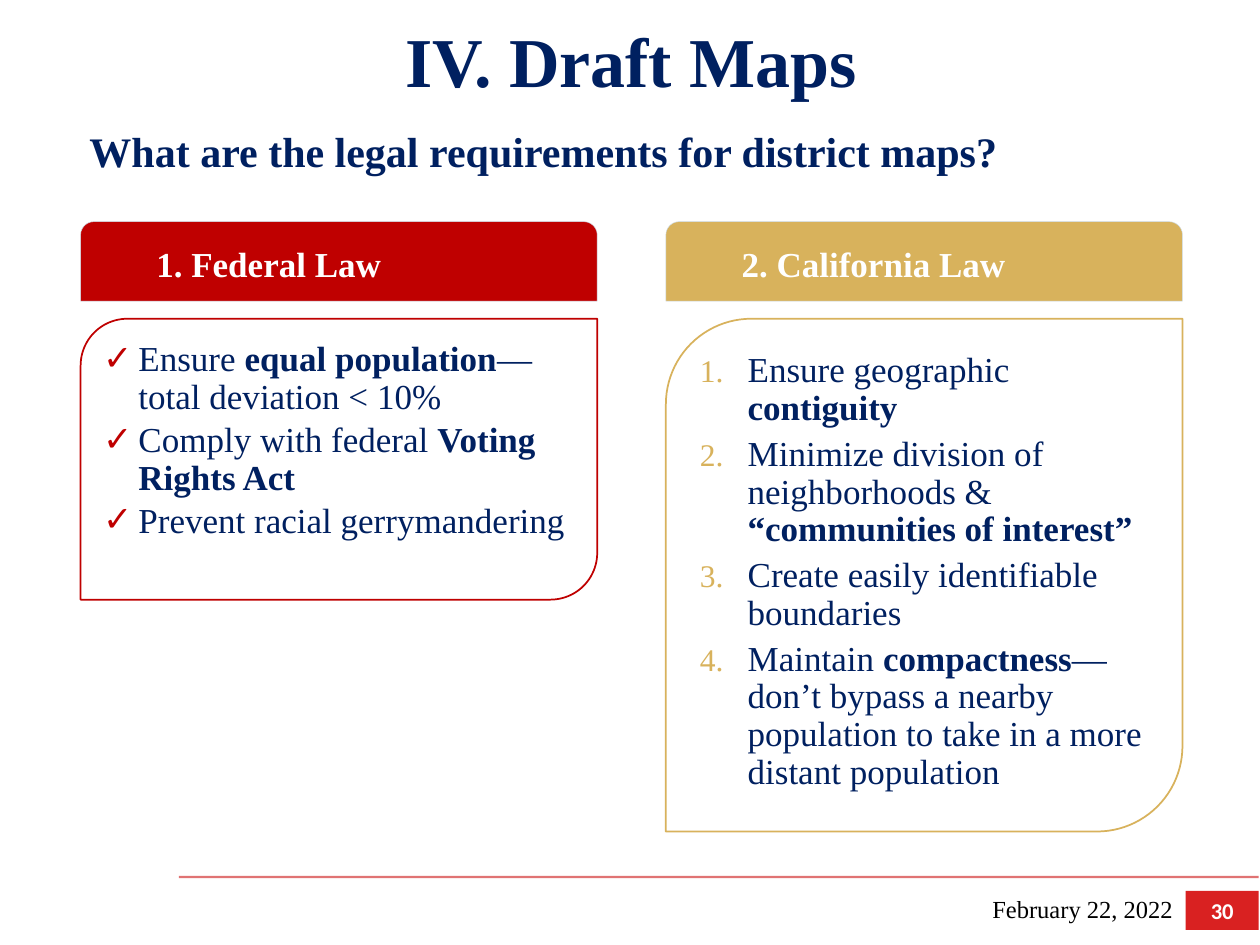
"""Builds the slide on the legal requirements for district maps."""
from dataclasses import dataclass
from typing import Optional

from lxml.etree import SubElement
from pptx import Presentation
from pptx.dml.color import RGBColor
from pptx.enum.shapes import MSO_CONNECTOR, MSO_SHAPE as Shape
from pptx.enum.text import MSO_ANCHOR as Anchor, MSO_AUTO_SIZE as AutoSize, PP_ALIGN as Align
from pptx.oxml.ns import qn
from pptx.util import Inches, Pt

NAVY = RGBColor(0x00, 0x20, 0x60)
RED = RGBColor(0xBF, 0x00, 0x00)
GOLD = RGBColor(0xD8, 0xB2, 0x5C)
RULE_RED = RGBColor(0xC8, 0x00, 0x00)
BADGE_RED = RGBColor(0xD9, 0x21, 0x21)
PALE_BLUE = RGBColor(0xCF, 0xDE, 0xEB)
WHITE = RGBColor(0xFF, 0xFF, 0xFF)
BLACK = RGBColor(0x00, 0x00, 0x00)

SERIF = "Times New Roman"
SLIDE_WIDTH, SLIDE_HEIGHT = Inches(10), Inches(7.5)
COLUMN, ROW = SLIDE_WIDTH / 100, SLIDE_HEIGHT / 75
PANEL_LEFT, PANEL_PITCH, PANEL_WIDTH = 6.4, 46.45, 41
HEADING_TOP, HEADING_HEIGHT, LIST_TOP = 17.6, 6.3, 25.3
CORNER_INSET = 0.16667 * 0.29289


@dataclass(frozen=True)
class Area:
    """A rectangle in grid columns and rows."""
    left: float
    top: float
    width: float
    height: float

    def lengths(self) -> tuple:
        """Return left, top, width and height as slide lengths."""
        return (int(self.left * COLUMN), int(self.top * ROW),
                int(self.width * COLUMN), int(self.height * ROW))

    def inset(self, margin: float) -> "Area":
        """Return the area shrunk on every side."""
        return Area(self.left + margin, self.top + margin,
                    self.width - 2 * margin, self.height - 2 * margin)


@dataclass(frozen=True)
class TextStyle:
    """The look of a run of text."""
    size: float
    color: RGBColor
    bold: bool = False
    name: str = SERIF


@dataclass(frozen=True)
class Bullet:
    """A list marker: a tag with its attributes, and its spacing."""
    tag: str
    attributes: dict
    percent: int
    indent: float
    space_after: float


@dataclass(frozen=True)
class Panel:
    """A heading above an outlined list; asterisks enclose bold words."""
    heading: str
    color: RGBColor
    height: float
    bullet: Bullet
    items: tuple


CHECK = Bullet("a:buChar", {"char": "✓"}, 100, 0.28, 3)
NUMBER = Bullet("a:buAutoNum", {"type": "arabicPeriod"}, 90, 0.38, 4.5)
PANELS = (
    Panel("1. Federal Law", RED, 22.3, CHECK, (
        "Ensure *equal population*—total deviation < 10%",
        "Comply with federal *Voting Rights Act*",
        "Prevent racial gerrymandering")),
    Panel("2. California Law", GOLD, 40.7, NUMBER, (
        "Ensure geographic *contiguity*",
        "Minimize division of neighborhoods & *“communities of interest”*",
        "Create easily identifiable boundaries",
        "Maintain *compactness*—don’t bypass a nearby population "
        "to take in a more distant population")),
)


def style_run(span, style: TextStyle) -> None:
    """Apply a text style to a run."""
    font = span.font
    font.name, font.size, font.bold = style.name, Pt(style.size), style.bold
    font.color.rgb = style.color


def set_frame(box, margin: float, anchor: Anchor) -> None:
    """Set wrapping, margins and anchor of a text frame."""
    frame = box.text_frame
    frame.word_wrap = True
    frame.auto_size = AutoSize.NONE
    frame.vertical_anchor = anchor
    frame.margin_left = frame.margin_right = Inches(margin)
    frame.margin_top = frame.margin_bottom = Inches(margin)


def place(box, area: Area) -> None:
    """Move and size a placeholder."""
    box.left, box.top, box.width, box.height = area.lengths()


def write_line(box, text: str, style: TextStyle, align: Align,
               anchor: Anchor = Anchor.MIDDLE, margin: float = 0.05) -> None:
    """Write one styled line into a box."""
    set_frame(box, margin, anchor)
    box.text_frame.text = text
    para = box.text_frame.paragraphs[0]
    para.alignment = align
    style_run(para.runs[0], style)


def add_box(slide, kind: Shape, area: Area, fill: Optional[RGBColor],
            line: Optional[RGBColor], weight: float = 1):
    """Add a flat preset shape."""
    box = slide.shapes.add_shape(kind, *area.lengths())
    box.shadow.inherit = False
    if fill is None:
        box.fill.background()
    else:
        box.fill.solid()
        box.fill.fore_color.rgb = fill
    if line is None:
        box.line.fill.background()
    else:
        box.line.color.rgb = line
        box.line.width = Pt(weight)
    return box


def add_bullet(para, bullet: Bullet, color: RGBColor) -> None:
    """Give a paragraph its marker and hanging indent."""
    props = para._p.get_or_add_pPr()
    props.set("marL", str(Inches(bullet.indent)))
    props.set("indent", str(-Inches(bullet.indent)))
    SubElement(SubElement(props, qn("a:buClr")), qn("a:srgbClr"), val=str(color))
    SubElement(props, qn("a:buSzPct"), val=str(bullet.percent * 1000))
    SubElement(props, qn(bullet.tag), **bullet.attributes)


def write_list(box, panel: Panel) -> None:
    """Write the items of a panel as a bulleted list."""
    set_frame(box, 0.07, Anchor.TOP)
    frame = box.text_frame
    frame.text = "\n".join(panel.items)
    for para, item in zip(frame.paragraphs, panel.items):
        para.text = ""
        add_bullet(para, panel.bullet, panel.color)
        para.line_spacing = 0.9
        para.space_before, para.space_after = Pt(0), Pt(panel.bullet.space_after)
        for index, words in enumerate(item.split("*")):
            if words:
                span = para.add_run()
                span.text = words
                style_run(span, TextStyle(20, NAVY, bold=index % 2 == 1))


def add_panel(slide, panel: Panel, position: int) -> None:
    """Draw one heading with its outlined list."""
    left = PANEL_LEFT + position * PANEL_PITCH
    heading = add_box(slide, Shape.ROUND_2_SAME_RECTANGLE,
                      Area(left, HEADING_TOP, PANEL_WIDTH, HEADING_HEIGHT),
                      panel.color, PALE_BLUE, 0.25)
    write_line(heading, panel.heading, TextStyle(20, WHITE, True), Align.LEFT, margin=0.07)
    heading.text_frame.margin_bottom = Inches(0.03)
    para = heading.text_frame.paragraphs[0]
    para.line_spacing = 0.9
    para._p.get_or_add_pPr().set("indent", str(Inches(0.5)))

    area = Area(left, LIST_TOP, PANEL_WIDTH, panel.height)
    add_box(slide, Shape.ROUND_2_DIAG_RECTANGLE, area, None, panel.color)
    body = slide.placeholders[position + 1]
    place(body, area.inset(min(area.width, area.height) * CORNER_INSET))
    write_list(body, panel)


def add_footer(slide) -> None:
    """Draw the rule, the date and the page number."""
    left, top, width, _ = Area(14.2, 69.6, 85.7, 0).lengths()
    rule = slide.shapes.add_connector(MSO_CONNECTOR.STRAIGHT, left, top, left + width, top)
    rule.line.color.rgb = RULE_RED
    rule.line.width = Pt(1.25)
    SubElement(rule._element.spPr, qn("a:effectLst"))
    color = next(rule._element.spPr.iter(qn("a:srgbClr")))
    SubElement(color, qn("a:alpha"), val="55000")
    date = slide.shapes.add_textbox(*Area(65.4, 70.4, 28.2, 3.4).lengths())
    write_line(date, "February 22, 2022", TextStyle(14, BLACK), Align.RIGHT)
    badge = add_box(slide, Shape.RECTANGLE, Area(94.1, 70.7, 5.8, 3.1), BADGE_RED, None)
    write_line(badge, "30", TextStyle(12.9, WHITE, True, "Calibri"), Align.CENTER)


def main() -> None:
    """Build and save the deck."""
    deck = Presentation()
    deck.slide_width, deck.slide_height = SLIDE_WIDTH, SLIDE_HEIGHT
    page = deck.slides.add_slide(deck.slide_layouts.get_by_name("Two Content"))
    add_footer(page)
    place(page.shapes.title, Area(0.2, 0, 99.8, 9.5))
    write_line(page.shapes.title, "IV. Draft Maps", TextStyle(40, NAVY, True), Align.CENTER)
    for position, panel in enumerate(PANELS):
        add_panel(page, panel, position)
    question = page.shapes.add_textbox(*Area(6.6, 9.5, 87.5, 8.1).lengths())
    write_line(question, "What are the legal requirements for district maps?",
               TextStyle(24, NAVY, True), Align.LEFT, Anchor.TOP)
    deck.save("out.pptx")


if __name__ == "__main__":
    main()
